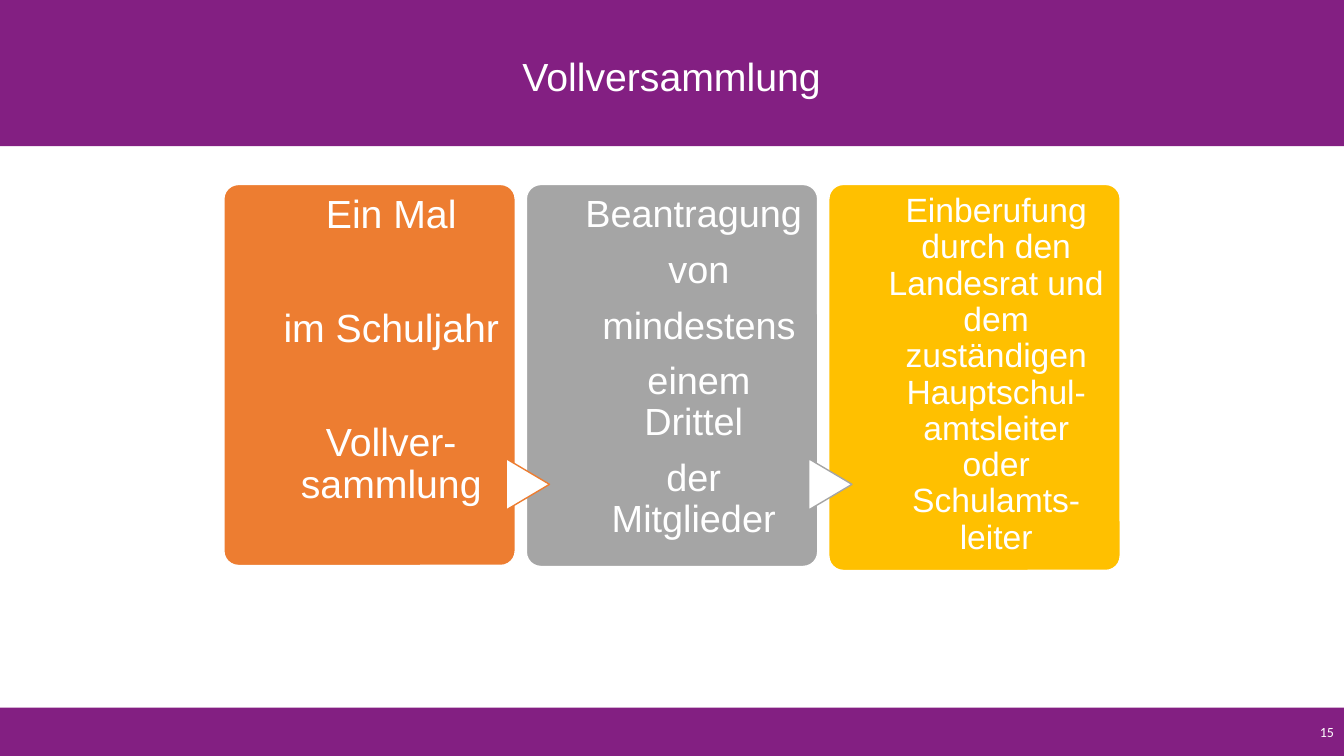
from pptx import Presentation
from pptx import util as u
from pptx.dml.color import RGBColor
from pptx.enum import shapes, text
from pptx.util import Inches

PURPLE = RGBColor(0x83, 0x1F, 0x82)
ORANGE = RGBColor(0xED, 0x7D, 0x31)
GREY = RGBColor(0xA5, 0xA5, 0xA5)
YELLOW = RGBColor(0xFF, 0xC0, 0x00)
WHITE = RGBColor(0xFF, 0xFF, 0xFF)

SLIDE_W, SLIDE_H = 13.33, 7.5
PANEL_LEFT, PANEL_TOP, PANEL_W, PANEL_STEP = 2.22, 1.83, 2.89, 3.0
ARROW_W, ARROW_H = 0.51, 0.43

# Colour, height, text size, space after, top inset, paragraphs
PANELS = [
    (ORANGE, 3.78, 28, 51, 0.06, ["Ein Mal", "im Schuljahr", "Vollver-sammlung"]),
    (GREY, 3.79, 27, 10.7, 0.06,
     ["Beantragung", " von", " mindestens", " einem Drittel", "der Mitglieder"]),
    (YELLOW, 3.83, 24, 0, 0.05,
     ["Einberufung durch den Landesrat und dem zuständigen "
      "Hauptschul-amtsleiter oder Schulamts-leiter"]),
]


class SlideBuilder:
    def __init__(self, prs):
        self.font = "Arial"
        self.s = prs.slides.add_slide(prs.slide_layouts[5])

    def label(self, sp, lines, size, font=None, align=text.PP_ALIGN.CENTER,
              anchor=text.MSO_ANCHOR.MIDDLE, spacing=1.0, after=0):
        tf = sp.text_frame
        tf.word_wrap = True
        tf.auto_size = text.MSO_AUTO_SIZE.NONE
        tf.vertical_anchor = anchor
        tf.text = "\n".join(lines)
        for p in tf.paragraphs:
            p.alignment = align
            p.line_spacing = spacing
            p.space_before = u.Pt(0)
            p.space_after = u.Pt(after)
            for r in p.runs:
                r.font.name = font or self.font
                r.font.size = u.Pt(size)
                r.font.color.rgb = WHITE

    def shape(self, kind, left, top, width, height, fill, line=None):
        sp = self.s.shapes.add_shape(
            kind, Inches(left), Inches(top), Inches(width), Inches(height))
        sp.shadow.inherit = False
        sp.fill.solid()
        sp.fill.fore_color.rgb = fill
        if line is None:
            sp.line.fill.background()
        else:
            sp.line.color.rgb = line
            sp.line.width = u.Pt(1)
        return sp

    def bar(self, top, height):
        return self.shape(shapes.MSO_SHAPE.RECTANGLE, 0, top, SLIDE_W, height, PURPLE)

    def title(self, words):
        sp = self.s.shapes.title
        sp.left, sp.top, sp.width, sp.height = map(Inches, (2.35, 0.01, 8.62, 1.45))
        self.label(sp, [words], 28, spacing=1.07, after=8)
        # Bring the title in front of the bars
        self.s.shapes.element.append(sp.element)

    def panel(self, left, fill, height, size, after, inset, lines):
        sp = self.shape(shapes.MSO_SHAPE.ROUNDED_RECTANGLE,
                        left, PANEL_TOP, PANEL_W, height, fill, WHITE)
        sp.adjustments[0] = 0.05
        tf = sp.text_frame
        tf.margin_left, tf.margin_right = Inches(0.54), Inches(0.11)
        tf.margin_top, tf.margin_bottom = Inches(inset), 0
        self.label(sp, lines, size, anchor=text.MSO_ANCHOR.TOP,
                   spacing=0.9, after=after)

    def arrow(self, left, line):
        sp = self.shape(shapes.MSO_SHAPE.FLOWCHART_EXTRACT,
                        left, 4.59, ARROW_W, ARROW_H, WHITE, line)
        sp.rotation = 90


def main():
    prs = Presentation()
    prs.slide_width, prs.slide_height = Inches(SLIDE_W), Inches(SLIDE_H)
    b = SlideBuilder(prs)

    # Footer with page number, header with title
    footer = b.bar(7.02, 0.48)
    b.label(footer, ["15"], 10, font="Calibri", align=text.PP_ALIGN.RIGHT)
    b.bar(0, 1.45)
    b.title("Vollversammlung")

    # Three steps, each joined to the one before by an arrow
    for i, (fill, *details) in enumerate(PANELS):
        left = PANEL_LEFT + i * PANEL_STEP
        b.panel(left, fill, *details)
        if i:
            b.arrow(left - 0.24, PANELS[i - 1][0])

    prs.save("out.pptx")


if __name__ == "__main__":
    main()
